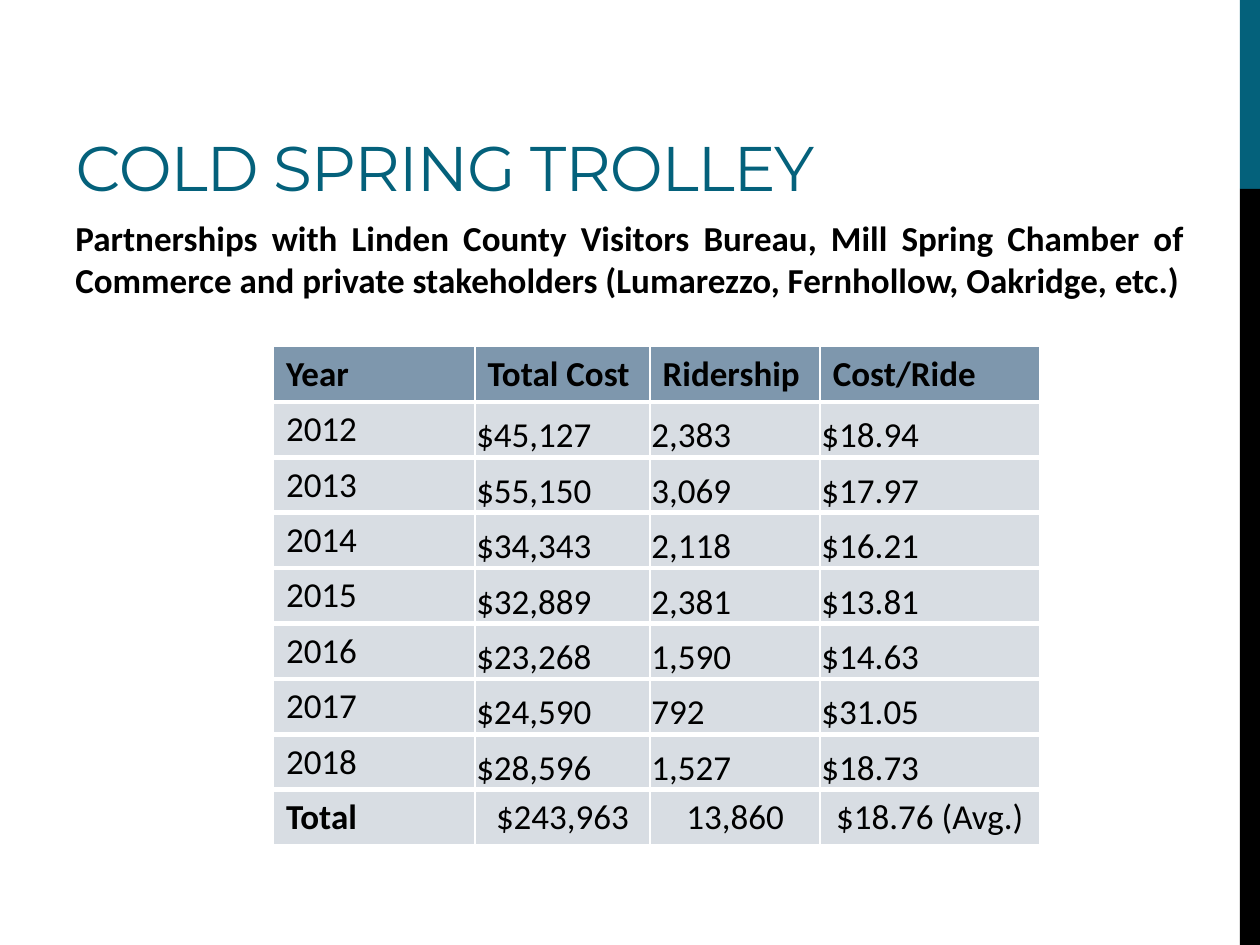
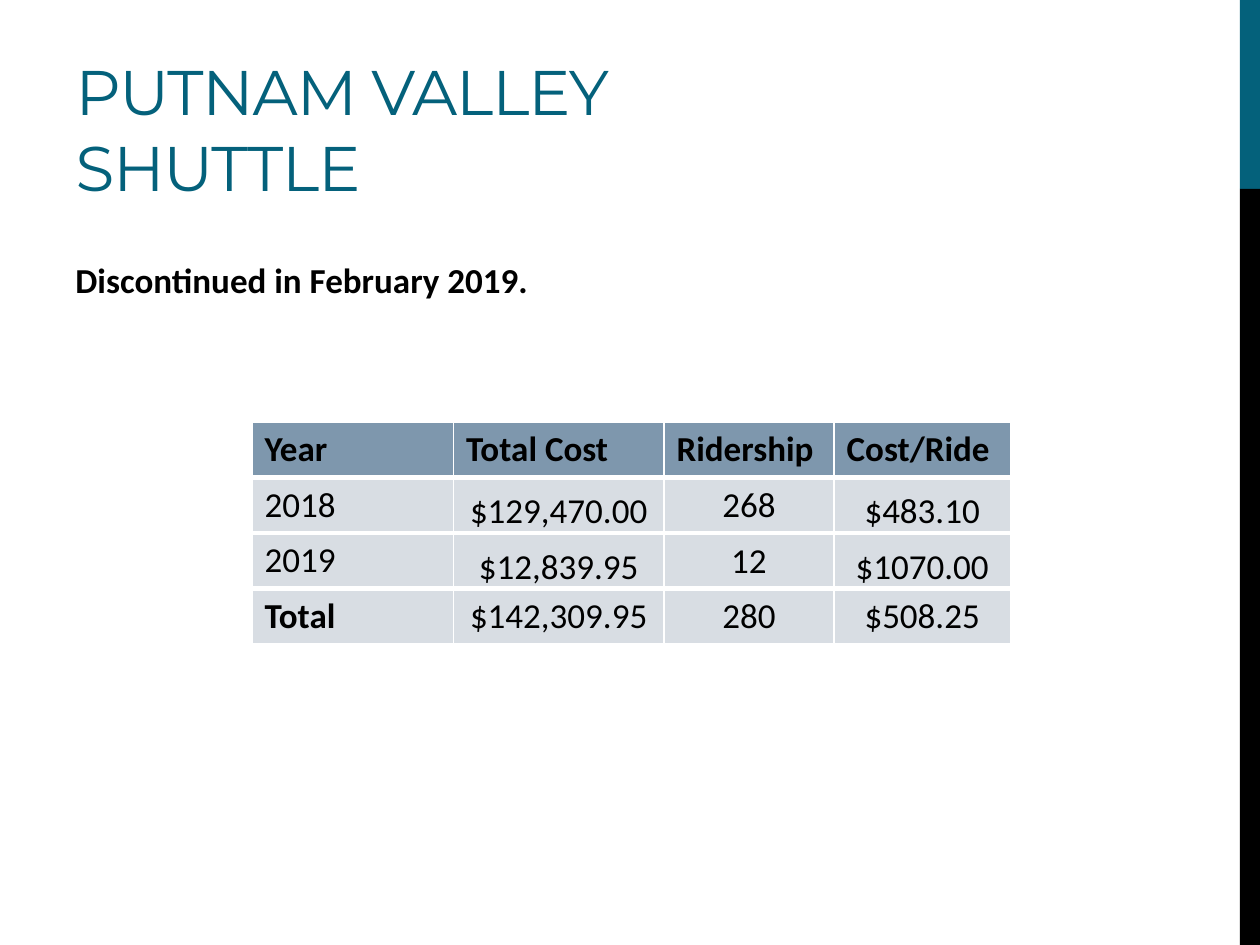
"""Two slides on trolley and shuttle costs, each with a title, a note and a yearly table."""
from lxml import etree
from pptx import Presentation, util as u
from pptx.dml.color import RGBColor
from pptx.enum import shapes, text
from pptx.oxml import ns

WIDTH, HEIGHT = u.Inches(10), u.Inches(7.5)
MARGIN = 0.05 * WIDTH
BAND_LEFT = 0.984 * WIDTH
BAND_SPLIT = 0.2 * HEIGHT
ROW_HEIGHT = u.Inches(0.44)
HAIR_INSET = u.Inches(0.01)

TEAL = RGBColor(0x04, 0x61, 0x7B)
BLACK = RGBColor(0, 0, 0)
WHITE = RGBColor(0xFF, 0xFF, 0xFF)
HEADER_FILL = RGBColor(0x7E, 0x97, 0xAD)
ROW_FILL = RGBColor(0xD8, 0xDD, 0xE3)

TITLE_FONT, BODY_FONT = "Montserrat", "Calibri"
LEFT, CENTER, JUSTIFY = text.PP_ALIGN.LEFT, text.PP_ALIGN.CENTER, text.PP_ALIGN.JUSTIFY
TOP, MIDDLE, BOTTOM = text.MSO_ANCHOR.TOP, text.MSO_ANCHOR.MIDDLE, text.MSO_ANCHOR.BOTTOM

HEADINGS = ("Year", "Total Cost", "Ridership", "Cost/Ride")
TROLLEY_ROWS = (
    ("2012", "$45,127", "2,383", "$18.94"),
    ("2013", "$55,150", "3,069", "$17.97"),
    ("2014", "$34,343", "2,118", "$16.21"),
    ("2015", "$32,889", "2,381", "$13.81"),
    ("2016", "$23,268", "1,590", "$14.63"),
    ("2017", "$24,590", "792", "$31.05"),
    ("2018", "$28,596", "1,527", "$18.73"),
    ("Total", "$243,963", "13,860", "$18.76 (Avg.)"),
)
SHUTTLE_ROWS = (
    ("2018", "$129,470.00", "268", "$483.10"),
    ("2019", "$12,839.95", "12", "$1070.00"),
    ("Total", "$142,309.95", "280", "$508.25"),
)


def place(shape, left, top, width, height):
    """Move and size a shape in whole units."""
    shape.left, shape.top = u.Emu(int(left)), u.Emu(int(top))
    shape.width, shape.height = u.Emu(int(width)), u.Emu(int(height))


def write(frame, words, font_name, size, color, bold=False, align=LEFT):
    """Fill a text frame with one formatted paragraph."""
    frame.text = words
    paragraph = frame.paragraphs[0]
    paragraph.alignment = align
    for run in paragraph.runs:
        run.font.name, run.font.size = font_name, u.Pt(size)
        run.font.bold, run.font.color.rgb = bold, color


def move_side_bands(slide):
    """Draw the side bands and hand them to the slide's layout."""
    layout_tree = slide.slide_layout.element.cSld.spTree
    bands = ((0, BAND_SPLIT, TEAL), (BAND_SPLIT, HEIGHT - BAND_SPLIT, BLACK))
    for number, (top, height, color) in enumerate(bands, start=101):
        band = slide.shapes.add_shape(shapes.MSO_SHAPE.RECTANGLE, 0, 0, 0, 0)
        place(band, BAND_LEFT, top, WIDTH - BAND_LEFT, height)
        band.shadow.inherit = False
        band.fill.solid()
        band.fill.fore_color.rgb = color
        band.line.fill.background()
        band.element.nvSpPr.cNvPr.set("id", str(number))
        layout_tree.append(band.element)


def add_titled_slide(deck, title):
    """Add a title-only slide with the shared title style."""
    slide = deck.slides.add_slide(deck.slide_layouts[5])
    heading = slide.shapes.title
    place(heading, MARGIN, u.Inches(0.17), u.Inches(6.33), BAND_SPLIT)
    frame = heading.text_frame
    write(frame, title, TITLE_FONT, 36, TEAL)
    frame.word_wrap, frame.auto_size = True, text.MSO_AUTO_SIZE.NONE
    frame.vertical_anchor = BOTTOM
    for run in frame.paragraphs[0].runs:
        run.font._element.set("spc", "-60")
    return slide


def add_note(slide, words, top):
    """Add the bold justified line below the title."""
    note = slide.shapes.add_textbox(0, 0, 0, 0)
    place(note, MARGIN, top, WIDTH - 2 * MARGIN, u.Inches(1.08))
    note.text_frame.word_wrap = True
    write(note.text_frame, words, BODY_FONT, 20, BLACK, True, JUSTIFY)


def set_borders(cell, top, bottom):
    """Give a cell white borders, thin at the sides."""
    properties = cell._tc.get_or_add_tcPr()
    widths = {"lnL": 1, "lnR": 1, "lnT": top, "lnB": bottom}
    for position, (side, points) in enumerate(widths.items()):
        line = etree.Element(ns.qn(f"a:{side}"), w=str(u.Pt(points)))
        fill = etree.SubElement(line, ns.qn("a:solidFill"))
        etree.SubElement(fill, ns.qn("a:srgbClr"), val=str(WHITE))
        properties.insert(position, line)


def add_cost_table(slide, left, top, column_inches, rows, align, anchors):
    """Add the yearly table; align and anchors govern its figures."""
    lines = (HEADINGS,) + rows
    last = len(lines) - 1
    widths = [u.Inches(inches) for inches in column_inches]
    table = slide.shapes.add_table(len(lines), len(widths), u.Inches(left), u.Inches(top),
                                   sum(widths), ROW_HEIGHT * len(lines)).table
    table.first_row = table.horz_banding = False
    for column, width in zip(table.columns, widths):
        column.width = width
    for r, line in enumerate(lines):
        table.rows[r].height = ROW_HEIGHT
        for c, words in enumerate(line):
            cell = table.cell(r, c)
            is_yearly_figure = 0 < r < last and c > 0
            is_total_figure = r == last and c > 0
            cell_align = CENTER if is_total_figure else align if is_yearly_figure else LEFT
            write(cell.text_frame, words, BODY_FONT, 20, BLACK,
                  r == 0 or words == "Total", cell_align)
            cell.fill.solid()
            cell.fill.fore_color.rgb = ROW_FILL if r else HEADER_FILL
            cell.vertical_anchor = anchors[c] if is_yearly_figure else TOP
            if is_yearly_figure:
                cell.margin_left = cell.margin_right = cell.margin_top = HAIR_INSET
                cell.margin_bottom = 0
            set_borders(cell, 3 if r else 1, 1 if r == last else 3)


def main():
    """Build and save both slides."""
    deck = Presentation()
    deck.slide_width, deck.slide_height = WIDTH, HEIGHT

    trolley = add_titled_slide(deck, "COLD SPRING TROLLEY")
    move_side_bands(trolley)
    add_note(trolley, "Partnerships with Linden County Visitors Bureau, Mill Spring Chamber of "
             "Commerce and private stakeholders (Lumarezzo, Fernhollow, Oakridge, etc.)",
             u.Inches(1.67))
    add_cost_table(trolley, 2.17, 2.75, (1.6, 1.39, 1.35, 1.74), TROLLEY_ROWS, LEFT,
                   (TOP, BOTTOM, BOTTOM, BOTTOM))

    shuttle = add_titled_slide(deck, "PUTNAM VALLEY SHUTTLE")
    add_cost_table(shuttle, 2, 3.35, (1.6, 1.67, 1.35, 1.4), SHUTTLE_ROWS, CENTER,
                   (TOP, BOTTOM, MIDDLE, BOTTOM))
    add_note(shuttle, "Discontinued in February 2019.", u.Inches(2))

    deck.save("out.pptx")


if __name__ == "__main__":
    main()
